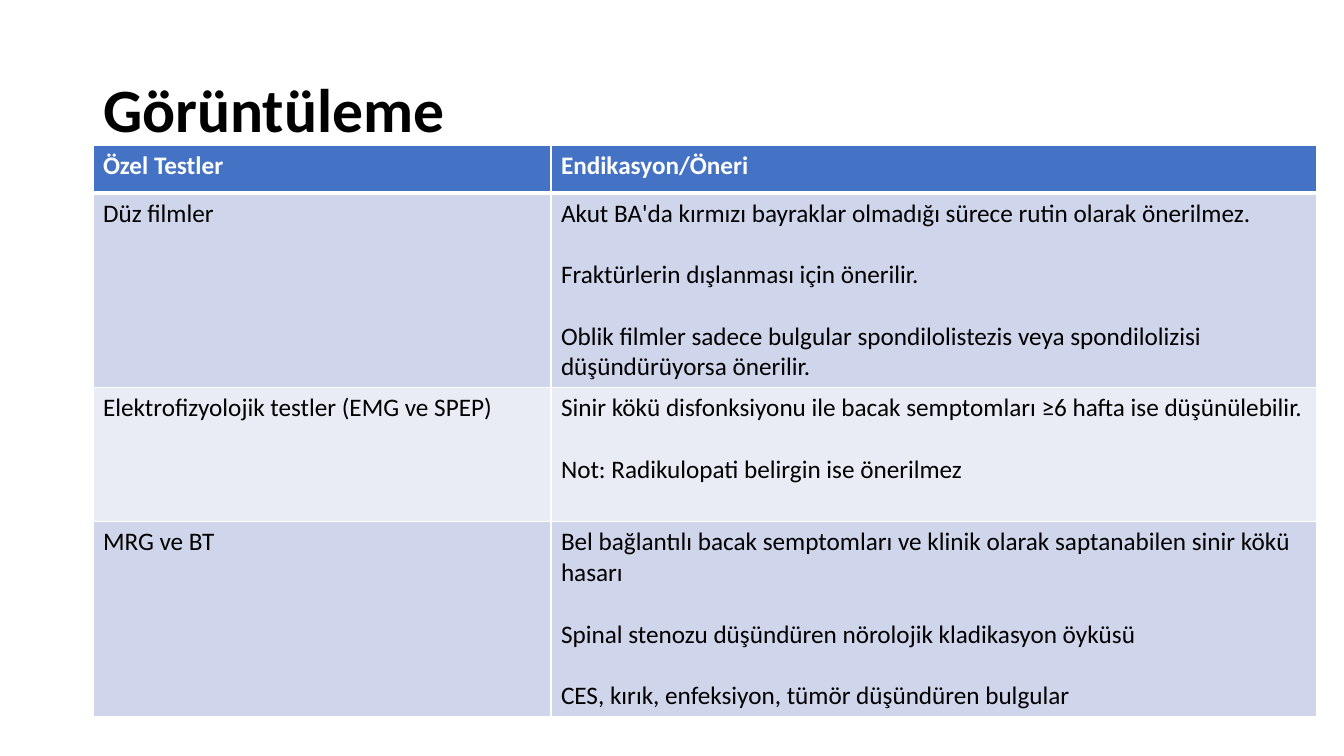
from dataclasses import dataclass

from lxml.etree import SubElement
from pptx import Presentation
from pptx.dml.color import RGBColor
from pptx.enum.text import MSO_ANCHOR, PP_ALIGN
from pptx.oxml.ns import qn
from pptx.util import Emu, Pt

PX_PER_INCH = 100.8
FONT = "Calibri"
WHITE, BLACK = "FFFFFF", "000000"
HEADER_FILL, BAND_DARK, BAND_LIGHT = "4472C4", "CFD5EA", "E9EBF5"
COLUMN_WIDTHS = (458, 766)


@dataclass(frozen=True)
class TestRow:
    height: int
    test: str
    advice: tuple[str, ...]


HEADER = TestRow(48, "Özel Testler", ("Endikasyon/Öneri",))
TESTS = (
    TestRow(194, "Düz filmler", (
        "Akut BA'da kırmızı bayraklar olmadığı sürece rutin olarak önerilmez.",
        "Fraktürlerin dışlanması için önerilir.",
        "Oblik filmler sadece bulgular spondilolistezis veya spondilolizisi "
        "düşündürüyorsa önerilir.",
    )),
    TestRow(134, "Elektrofizyolojik testler (EMG ve SPEP)", (
        "Sinir kökü disfonksiyonu ile bacak semptomları ≥6 hafta ise düşünülebilir.",
        "Not: Radikulopati belirgin ise önerilmez",
    )),
    TestRow(194, "MRG ve BT", (
        "Bel bağlantılı bacak semptomları ve klinik olarak saptanabilen sinir kökü hasarı",
        "Spinal stenozu düşündüren nörolojik kladikasyon öyküsü",
        "CES, kırık, enfeksiyon, tümör düşündüren bulgular",
    )),
)


def px(value: int) -> Emu:
    return Emu(round(value * 914400 / PX_PER_INCH))


def rgb(value: str) -> RGBColor:
    return RGBColor.from_string(value)


def write(tf, *paragraphs: str, size: int = 18, color: str = BLACK,
          bold: bool = False, gap: int = 22, line_spacing: float = 1.0) -> None:
    tf.word_wrap = True
    for i, text in enumerate(paragraphs):
        p = tf.add_paragraph() if i else tf.paragraphs[0]
        p.alignment = PP_ALIGN.LEFT
        p.line_spacing = line_spacing
        p.space_before = Pt(gap if i else 0)
        r = p.add_run()
        r.text = text
        r.font.name = FONT
        r.font.size = Pt(size)
        r.font.bold = bold
        r.font.color.rgb = rgb(color)


def set_borders(cell, top: int = 1, bottom: int = 1) -> None:
    tc_pr = cell._tc.get_or_add_tcPr()
    for side, width in (("L", 1), ("R", 1), ("T", top), ("B", bottom)):
        ln = SubElement(tc_pr, qn(f"a:ln{side}"), w=str(Pt(width)))
        fill = SubElement(ln, qn("a:solidFill"))
        SubElement(fill, qn("a:srgbClr"), val=WHITE)


def add_title(slide, text: str) -> None:
    sp = slide.shapes.title
    sp.left, sp.top, sp.width, sp.height = px(93), px(40), px(1159), px(146)
    sp.text_frame.vertical_anchor = MSO_ANCHOR.MIDDLE
    write(sp.text_frame, text, size=44, bold=True, line_spacing=0.9)


def add_tests_table(slide, left: int, top: int) -> None:
    rows = (HEADER, *TESTS)
    frame = slide.shapes.add_table(
        len(rows), len(COLUMN_WIDTHS), px(left), px(top),
        px(sum(COLUMN_WIDTHS)), px(sum(row.height for row in rows)))
    table = frame.table
    for column, width in zip(table.columns, COLUMN_WIDTHS):
        column.width = px(width)
    for i, row in enumerate(rows):
        is_header = i == 0
        fill = HEADER_FILL if is_header else (BAND_LIGHT, BAND_DARK)[i % 2]
        table.rows[i].height = px(row.height)
        for j, paragraphs in enumerate(((row.test,), row.advice)):
            cell = table.cell(i, j)
            set_borders(cell, top=3 if i == 1 else 1, bottom=3 if is_header else 1)
            cell.fill.solid()
            cell.fill.fore_color.rgb = rgb(fill)
            write(cell.text_frame, *paragraphs, bold=is_header,
                  color=WHITE if is_header else BLACK)


def main() -> None:
    prs = Presentation()
    prs.slide_width, prs.slide_height = px(1344), px(756)
    slide = prs.slides.add_slide(prs.slide_layouts.get_by_name("Title Only"))
    add_title(slide, "Görüntüleme")
    add_tests_table(slide, left=93, top=145)
    prs.save("out.pptx")


if __name__ == "__main__":
    main()
